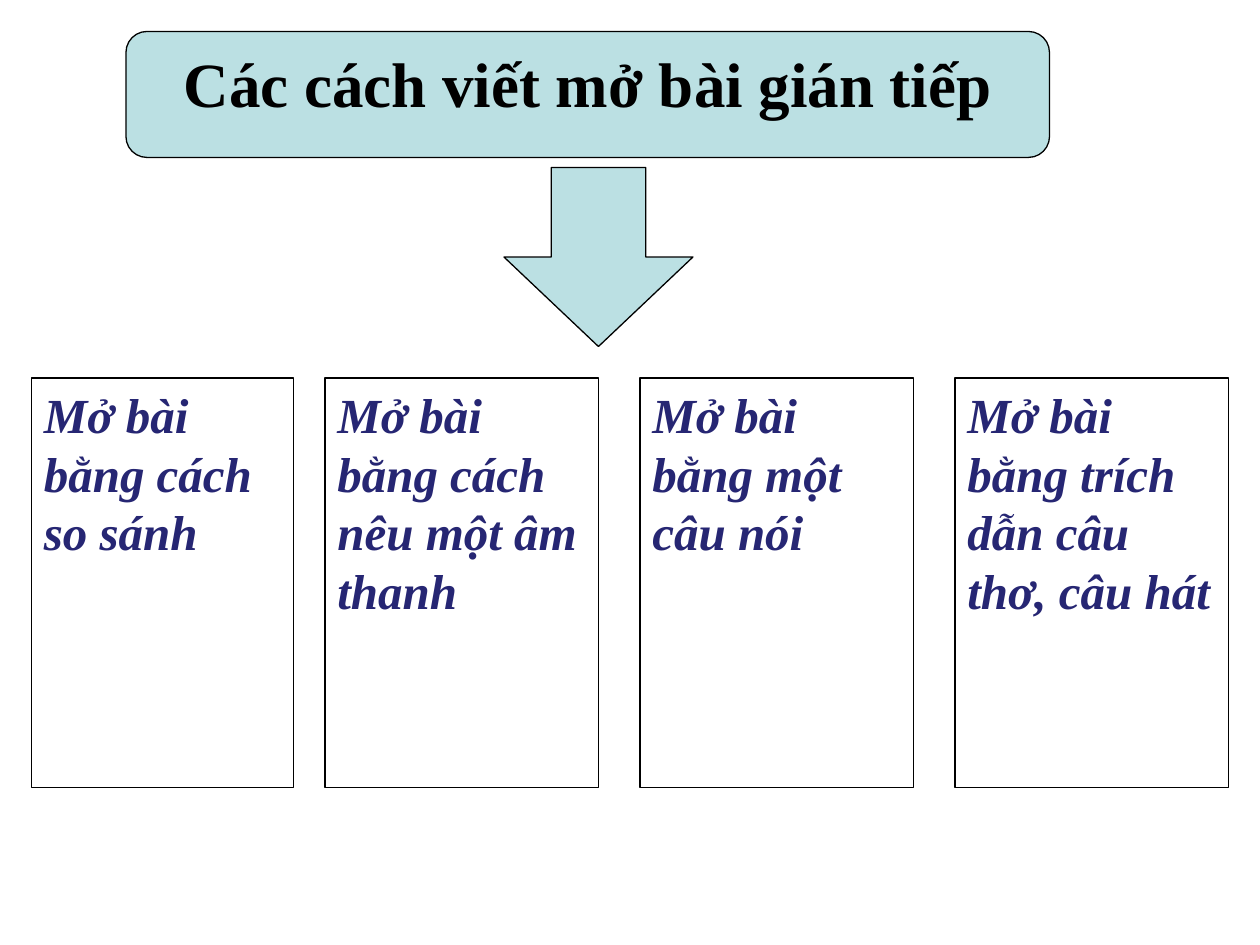
import dataclasses

import pptx
import pptx.dml.color
import pptx.enum.shapes
import pptx.enum.text
import pptx.util

Inches = pptx.util.Inches
SHAPE = pptx.enum.shapes.MSO_SHAPE
ALIGN = pptx.enum.text.PP_ALIGN
ANCHOR = pptx.enum.text.MSO_ANCHOR

BLACK, NAVY, AQUA = "000000", "262673", "BBE0E3"
TITLE_FONT = {"name": "Times New Roman", "size": pptx.util.Pt(36), "bold": True}
CARD_FONT = {**TITLE_FONT, "size": pptx.util.Pt(28), "italic": True}


@dataclasses.dataclass
class Box:
    left: float
    top: float
    width: float
    height: float


@dataclasses.dataclass
class Card:
    left: float
    width: float
    text: str


CARDS = [
    Card(0.25, 2.08, "Mở bài bằng cách so sánh"),
    Card(2.58, 2.17, "Mở bài bằng cách nêu một âm thanh"),
    Card(5.08, 2.17, "Mở bài bằng một câu nói"),
    Card(7.58, 2.17, "Mở bài bằng trích dẫn câu thơ, câu hát"),
]


def rgb(color: str) -> pptx.dml.color.RGBColor:
    return pptx.dml.color.RGBColor.from_string(color)


def set_format(obj, values: dict) -> None:
    for name, value in values.items():
        setattr(obj, name, value)


def draw_shape(s, kind, box: Box, fill: str | None = None):
    sp = s.shapes.add_shape(kind, *map(Inches, dataclasses.astuple(box)))
    sp.shadow.inherit = False
    if fill:
        sp.fill.solid()
        sp.fill.fore_color.rgb = rgb(fill)
    else:
        sp.fill.background()
    sp.line.color.rgb = rgb(BLACK)
    sp.line.width = pptx.util.Pt(0.75)
    return sp


def write_text(sp, text: str, font: dict, color: str, align) -> None:
    tf = sp.text_frame
    set_format(tf, {
        "word_wrap": True,
        "auto_size": pptx.enum.text.MSO_AUTO_SIZE.NONE,
        "vertical_anchor": ANCHOR.TOP,
    })
    p = tf.paragraphs[0]
    p.alignment = align
    r = p.add_run()
    r.text = text
    set_format(r.font, font)
    r.font.color.rgb = rgb(color)


def draw_title(s, text: str, box: Box) -> None:
    draw_shape(s, SHAPE.ROUNDED_RECTANGLE, box, AQUA)
    title = s.shapes.title
    s.shapes._spTree.append(title._element)
    set_format(title, {
        "left": Inches(box.left),
        "top": Inches(box.top + 0.05),
        "width": Inches(box.width),
        "height": Inches(box.height - 0.1),
    })
    write_text(title, text, TITLE_FONT, BLACK, ALIGN.CENTER)


def draw_card(s, card: Card) -> None:
    sp = draw_shape(s, SHAPE.RECTANGLE, Box(card.left, 3, card.width, 3.25))
    write_text(sp, card.text, CARD_FONT, NAVY, ALIGN.LEFT)


def main() -> None:
    prs = pptx.Presentation()
    prs.slide_width, prs.slide_height = Inches(10), Inches(7.5)
    s = prs.slides.add_slide(prs.slide_layouts[5])
    draw_title(s, "Các cách viết mở bài gián tiếp", Box(1, 0.25, 7.33, 1))
    for card in CARDS:
        draw_card(s, card)
    draw_shape(s, SHAPE.DOWN_ARROW, Box(4, 1.33, 1.5, 1.42), AQUA)
    prs.save("out.pptx")


if __name__ == "__main__":
    main()
